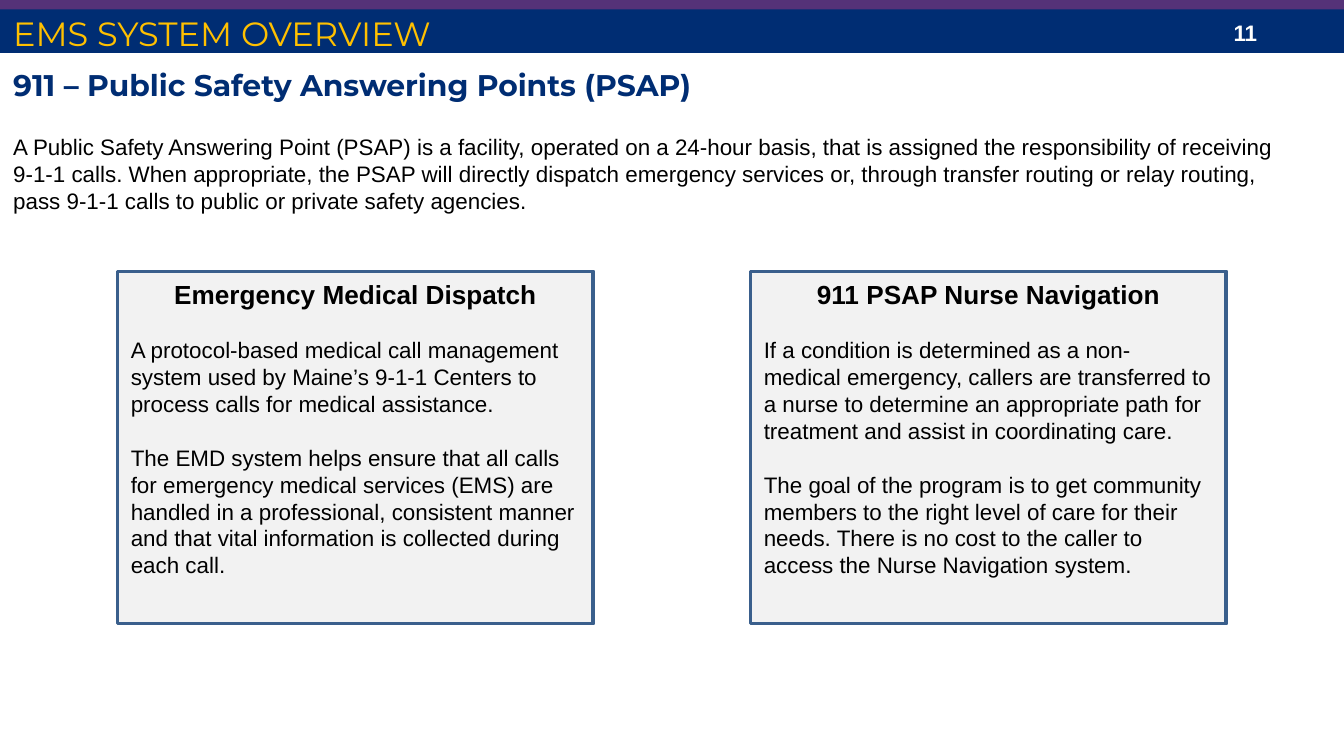
from dataclasses import dataclass

from pptx import Presentation
from pptx.dml.color import RGBColor as Color
from pptx.enum.shapes import MSO_SHAPE as Shape
from pptx.enum.text import MSO_ANCHOR as Anchor, MSO_AUTO_SIZE as AutoSize, PP_ALIGN as Align
from pptx.util import Emu, Pt

EMU_PER_PX = 4572


def px(length):
    return Emu(length * EMU_PER_PX)


@dataclass(frozen=True)
class Theme:
    navy: str = "002D73"
    purple: str = "553278"
    gold: str = "FFC000"
    white: str = "FFFFFF"
    black: str = "000000"
    card_fill: str = "F2F2F2"
    card_line: str = "3A5F8C"
    display_font: str = "Montserrat"
    body_font: str = "Arial"
    title_size: int = 18
    subtitle_size: int = 16
    heading_size: int = 14
    body_size: int = 12
    line_gap: float = 14.4
    border: int = 2


class SlideBuilder:
    def __init__(self, slide, theme):
        self.slide = slide
        self.theme = theme

    def format(self, paragraph, size, color, font=None, bold=False):
        for run in paragraph.runs:
            run.font.name = font or self.theme.body_font
            run.font.size = Pt(size)
            run.font.bold = bold
            run.font.color.rgb = Color.from_string(color)

    def rectangle(self, left, top, width, height, fill, line=None):
        shape = self.slide.shapes.add_shape(
            Shape.RECTANGLE, px(left), px(top), px(width), px(height))
        shape.shadow.inherit = False
        shape.fill.solid()
        shape.fill.fore_color.rgb = Color.from_string(fill)
        if line:
            shape.line.color.rgb = Color.from_string(line)
            shape.line.width = Pt(self.theme.border)
        else:
            shape.line.fill.background()
        return shape

    def text(self, left, top, width, height, text, size, color, font=None,
             bold=False, anchor=Anchor.TOP, inset_top=10, inset_bottom=10, grow=True):
        box = self.slide.shapes.add_textbox(px(left), px(top), px(width), px(height))
        frame = box.text_frame
        frame.word_wrap = True
        frame.auto_size = AutoSize.SHAPE_TO_FIT_TEXT if grow else AutoSize.NONE
        frame.vertical_anchor = anchor
        frame.margin_top, frame.margin_bottom = px(inset_top), px(inset_bottom)
        frame.text = text
        self.format(frame.paragraphs[0], size, color, font, bold)

    def card(self, left, top, width, height, heading, body):
        theme = self.theme
        shape = self.rectangle(left, top, width, height, theme.card_fill, theme.card_line)
        frame = shape.text_frame
        frame.word_wrap = True
        frame.vertical_anchor = Anchor.TOP
        frame.text = "\n".join([heading, *body])
        title, *paragraphs = frame.paragraphs
        title.alignment = Align.CENTER
        self.format(title, theme.heading_size, theme.black, bold=True)
        for paragraph in paragraphs:
            paragraph.alignment = Align.LEFT
            paragraph.space_before = Pt(theme.line_gap)
            self.format(paragraph, theme.body_size, theme.black)


INTRO = (
    "A Public Safety Answering Point (PSAP) is a facility, operated on a 24-hour basis, "
    "that is assigned the responsibility of receiving 9-1-1 calls. When appropriate, the "
    "PSAP will directly dispatch emergency services or, through transfer routing or relay "
    "routing, pass 9-1-1 calls to public or private safety agencies."
)

CARDS = [
    ("Emergency Medical Dispatch", [
        "A protocol-based medical call management system used by Maine’s 9-1-1 Centers "
        "to process calls for medical assistance.",
        "The EMD system helps ensure that all calls for emergency medical services (EMS) "
        "are handled in a professional, consistent manner and that vital information is "
        "collected during each call.",
    ]),
    ("911 PSAP Nurse Navigation", [
        "If a condition is determined as a non- medical emergency, callers are transferred "
        "to a nurse to determine an appropriate path for treatment and assist in "
        "coordinating care.",
        "The goal of the program is to get community members to the right level of care "
        "for their needs. There is no cost to the caller to access the Nurse Navigation "
        "system.",
    ]),
]


def main():
    presentation = Presentation()
    slide_width, slide_height = 2000, 1125
    presentation.slide_width, presentation.slide_height = px(slide_width), px(slide_height)
    slide = presentation.slides.add_slide(presentation.slide_layouts[6])
    theme = Theme()
    builder = SlideBuilder(slide, theme)

    builder.rectangle(0, 13, slide_width, 66, theme.navy)
    builder.text(1816, 19, 150, 60, "11", theme.body_size, theme.white, bold=True, grow=False)
    builder.rectangle(0, -4, slide_width, 18, theme.purple)
    builder.text(0, 19, slide_width, 60, "EMS SYSTEM OVERVIEW", theme.title_size, theme.gold,
                 theme.display_font, anchor=Anchor.BOTTOM, inset_top=0, inset_bottom=0)
    builder.text(0, 80, slide_width, 74, "911 – Public Safety Answering Points (PSAP)",
                 theme.subtitle_size, theme.navy, theme.display_font, bold=True,
                 inset_top=20, inset_bottom=0)
    builder.text(0, 188, 1926, 142, INTRO, theme.body_size, theme.black)

    card_left, card_pitch = 175, 942
    for index, (heading, body) in enumerate(CARDS):
        builder.card(card_left + index * card_pitch, 404, 708, 524, heading, body)

    presentation.save("out.pptx")


if __name__ == "__main__":
    main()
